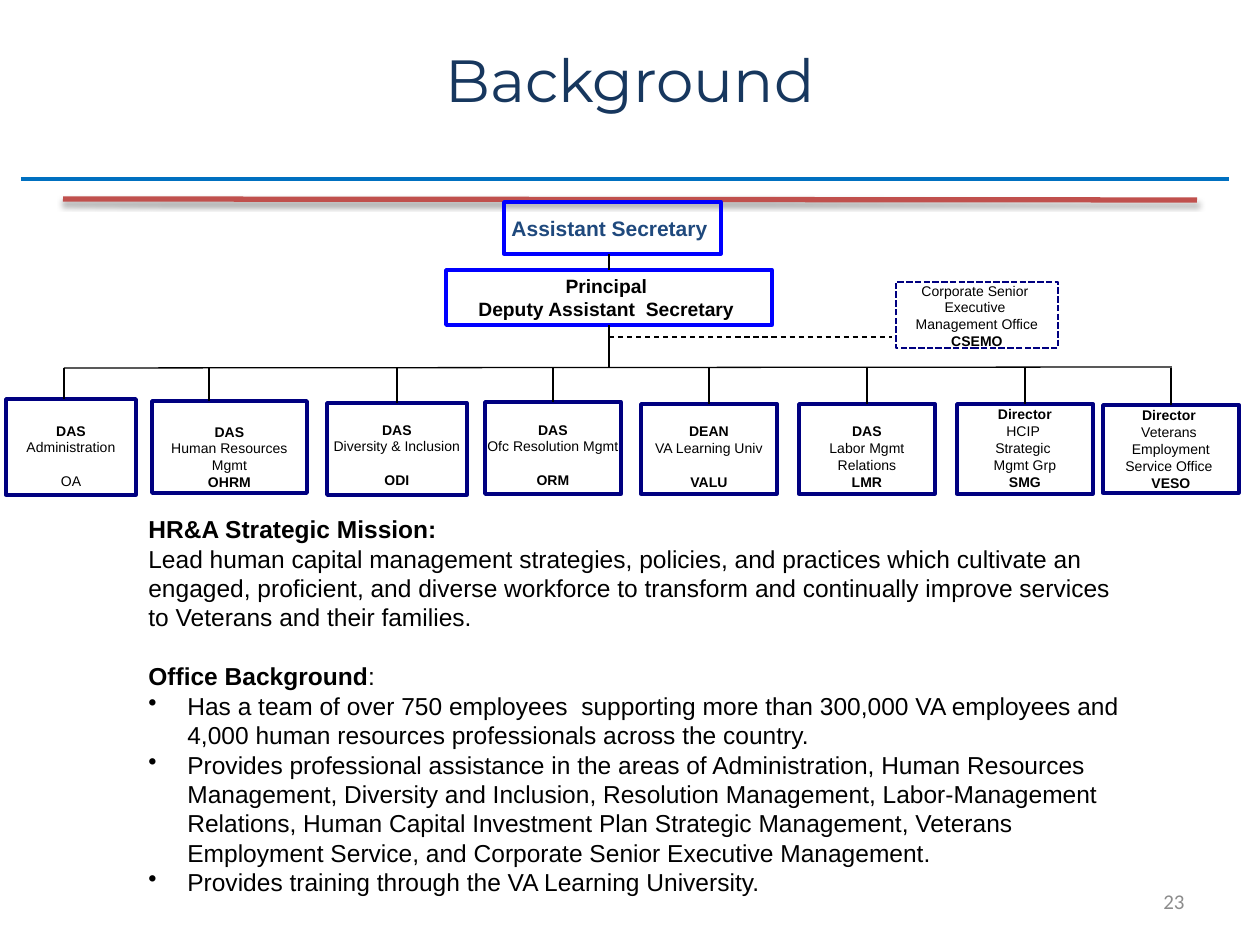
from dataclasses import dataclass
from typing import Any, Optional

from lxml import etree
from pptx import Presentation, util as u
from pptx.dml.color import RGBColor
from pptx.enum import dml, shapes, text
from pptx.oxml.ns import qn

UNIT = 914400 / 126
LEAD = 1.2
MID = text.MSO_ANCHOR.MIDDLE
TOP = text.MSO_ANCHOR.TOP
LEFT, CENTER, RIGHT = text.PP_ALIGN.LEFT, text.PP_ALIGN.CENTER, text.PP_ALIGN.RIGHT


@dataclass(frozen=True)
class Theme:
    black: str = "000000"
    title: str = "17375E"
    head: str = "1F497D"
    blue: str = "0000FF"
    navy: str = "000080"
    sky: str = "0070C0"
    red: str = "C0504D"
    gray: str = "8C8C8C"
    sans: str = "Arial"
    big: int = 34
    body: int = 14
    chief: int = 12
    deputy: int = 11
    small: int = 8


@dataclass(frozen=True)
class Line:
    words: str
    bold: bool = False
    gap: bool = False
    dot: bool = False
    tail: str = ""


@dataclass(frozen=True)
class Box:
    x: int
    y: int
    w: int
    h: int
    lines: tuple[Line, ...]
    pad: Optional[int] = None
    stem: Optional[int] = None


@dataclass(frozen=True)
class Style:
    size: int
    color: str
    font: str = "Arial"
    align: Any = CENTER
    lead: bool = True


T = Theme()
SMALL = Style(T.small, T.black)


def px(n: float) -> int:
    return round(n * UNIT)


def put(obj: Any, form: dict[str, Any]) -> None:
    for key, val in form.items():
        setattr(obj, key, val)


def add_run(para: Any, words: str, bold: bool, style: Style) -> None:
    run = para.add_run()
    run.text = words
    put(run.font, {"name": style.font, "size": u.Pt(style.size), "bold": bold})
    run.font.color.rgb = RGBColor.from_string(style.color)


def write(frame: Any, lines: tuple[Line, ...], style: Style) -> None:
    for i, line in enumerate(lines):
        para = frame.add_paragraph() if i else frame.paragraphs[0]
        if line.dot:
            prop = para._p.get_or_add_pPr()
            put_xml = {"marL": px(39), "indent": -px(39)}
            for key, val in put_xml.items():
                prop.set(key, str(val))
            etree.SubElement(prop, qn("a:buChar"), char="•")
        para.alignment = style.align
        pitch = u.Pt(style.size * LEAD)
        if style.lead:
            para.line_spacing = pitch
        if line.gap:
            para.space_before = pitch
        add_run(para, line.words, line.bold, style)
        if line.tail:
            add_run(para, line.tail, False, style)


def label(slide: Any, box: Box, style: Style, anchor: Any) -> None:
    item = slide.shapes.add_textbox(px(box.x), px(box.y), px(box.w), px(box.h))
    put(item.text_frame, {"word_wrap": True, "vertical_anchor": anchor})
    write(item.text_frame, box.lines, style)


def frame(slide: Any, box: Box, color: str, style: Style,
          width: float = 2, dash: Any = None) -> Any:
    item = slide.shapes.add_shape(
        shapes.MSO_SHAPE.RECTANGLE, px(box.x), px(box.y), px(box.w), px(box.h))
    item.shadow.inherit = False
    item.fill.background()
    item.line.color.rgb = RGBColor.from_string(color)
    put(item.line, {"width": u.Pt(width), "dash_style": dash})
    put(item.text_frame, {
        "word_wrap": False,
        "vertical_anchor": MID if box.pad is None else TOP,
        "margin_left": 0, "margin_right": 0,
        "margin_top": px(box.pad or 0), "margin_bottom": 0,
    })
    write(item.text_frame, box.lines, style)
    return item


def link(slide: Any, x1: int, y1: int, x2: int, y2: int, color: str = T.black,
         width: float = 0.75, dash: Any = None, shade: bool = False) -> Any:
    item = slide.shapes.add_connector(
        shapes.MSO_CONNECTOR.STRAIGHT, px(x1), px(y1), px(x2), px(y2))
    item.line.color.rgb = RGBColor.from_string(color)
    put(item.line, {"width": u.Pt(width), "dash_style": dash})
    fx = etree.SubElement(item._element.spPr, qn("a:effectLst"))
    if shade:
        cast = etree.SubElement(
            fx, qn("a:outerShdw"), blurRad=str(u.Pt(3.1)), dist=str(u.Pt(1.8)),
            dir="5400000", rotWithShape="0")
        tint = etree.SubElement(cast, qn("a:srgbClr"), val=T.black)
        etree.SubElement(tint, qn("a:alpha"), val="35000")
    return item


def unit(role: str, mid: tuple[str, ...], code: str, gap: bool = False,
         bold: bool = True) -> tuple[Line, ...]:
    return (Line(role, True), *map(Line, mid), Line(code, bold, gap))


BUS = 368
TRUNK = 609
TEAMS = (
    Box(6, 399, 130, 96, unit("DAS", ("Administration",), "OA", True, False), 23, 64),
    Box(152, 401, 155, 92, unit("DAS", ("Human Resources", "Mgmt"), "OHRM"), 22, 209),
    Box(327, 403, 140, 92, unit("DAS", ("Diversity & Inclusion",), "ODI", True), 18),
    Box(485, 402, 136, 92, unit("DAS", ("Ofc Resolution Mgmt",), "ORM", True), 19),
    Box(641, 404, 136, 90, unit("DEAN", ("VA Learning Univ",), "VALU", True), 19),
    Box(799, 404, 136, 90, unit("DAS", ("Labor Mgmt", "Relations"), "LMR"), 19),
    Box(957, 404, 136, 90,
        unit("Director", ("HCIP ", "Strategic ", "Mgmt Grp"), "SMG"), 2),
    Box(1103, 405, 136, 88,
        unit("Director ", ("Veterans ", "Employment", "Service Office "), "VESO"), 2),
)
CHIEF = Box(504, 202, 217, 52, (Line("Assistant Secretary ", True),))
DEPUTY = Box(446, 270, 326, 55, (
    Line("Principal ", True), Line("Deputy Assistant  Secretary ", True)))
OFFICE = Box(896, 282, 162, 66, (
    Line("Corporate Senior "), Line("Executive "), Line("Management Office"),
    Line("CSEMO", True)), 0)
MISSION = Box(136, 508, 1008, 437, (
    Line("HR&A Strategic Mission:", True),
    Line("Lead human capital management strategies, policies, and practices which "
         "cultivate an engaged, proficient, and diverse workforce to transform and "
         "continually improve services to Veterans and their families."),
    Line("Office Background", True, True, tail=":"),
    Line("Has a team of over 750 employees  supporting more than 300,000 VA employees "
         "and 4,000 human resources professionals across the country.", dot=True),
    Line("Provides professional assistance in the areas of Administration, Human "
         "Resources Management, Diversity and Inclusion, Resolution Management, "
         "Labor-Management Relations, Human Capital Investment Plan Strategic "
         "Management, Veterans Employment Service, and Corporate Senior Executive "
         "Management.", dot=True),
    Line("Provides training through the VA Learning University.", dot=True),
))


def main() -> None:
    deck = Presentation()
    put(deck, {"slide_width": px(1260), "slide_height": px(945)})
    slide = deck.slides.add_slide(deck.slide_layouts[6])

    label(slide, Box(903, 876, 294, 50, (Line("23"),)),
          Style(12, T.gray, "Calibri", RIGHT, False), MID)
    link(slide, 21, 179, 1229, 179, T.sky, 2)
    link(slide, 63, 199, 1197, 200, T.red, 3, shade=True)
    label(slide, Box(63, 0, 1134, 157, (Line("Background"),)),
          Style(T.big, T.title, "Montserrat", lead=False), MID)
    label(slide, MISSION, Style(T.body, T.black, align=LEFT), TOP)

    frame(slide, CHIEF, T.blue, Style(T.chief, T.head))
    deputy = frame(slide, DEPUTY, T.blue, Style(T.deputy, T.black))
    link(slide, TRUNK, 254, TRUNK, 270).end_connect(deputy, 0)
    link(slide, TRUNK, 325, TRUNK, BUS).begin_connect(deputy, 2)
    link(slide, 64, BUS, 1172, BUS - 1)
    for team in TEAMS:
        item = frame(slide, team, T.navy, SMALL)
        x = team.stem or team.x + team.w // 2
        stem = link(slide, x, BUS, x, team.y)
        if team.stem is None:
            stem.end_connect(item, 0)

    link(slide, TRUNK, 337, 892, 337, dash=dml.MSO_LINE.DASH)
    frame(slide, OFFICE, T.navy, SMALL, 1.25, dml.MSO_LINE.SQUARE_DOT)
    deck.save("out.pptx")


if __name__ == "__main__":
    main()
